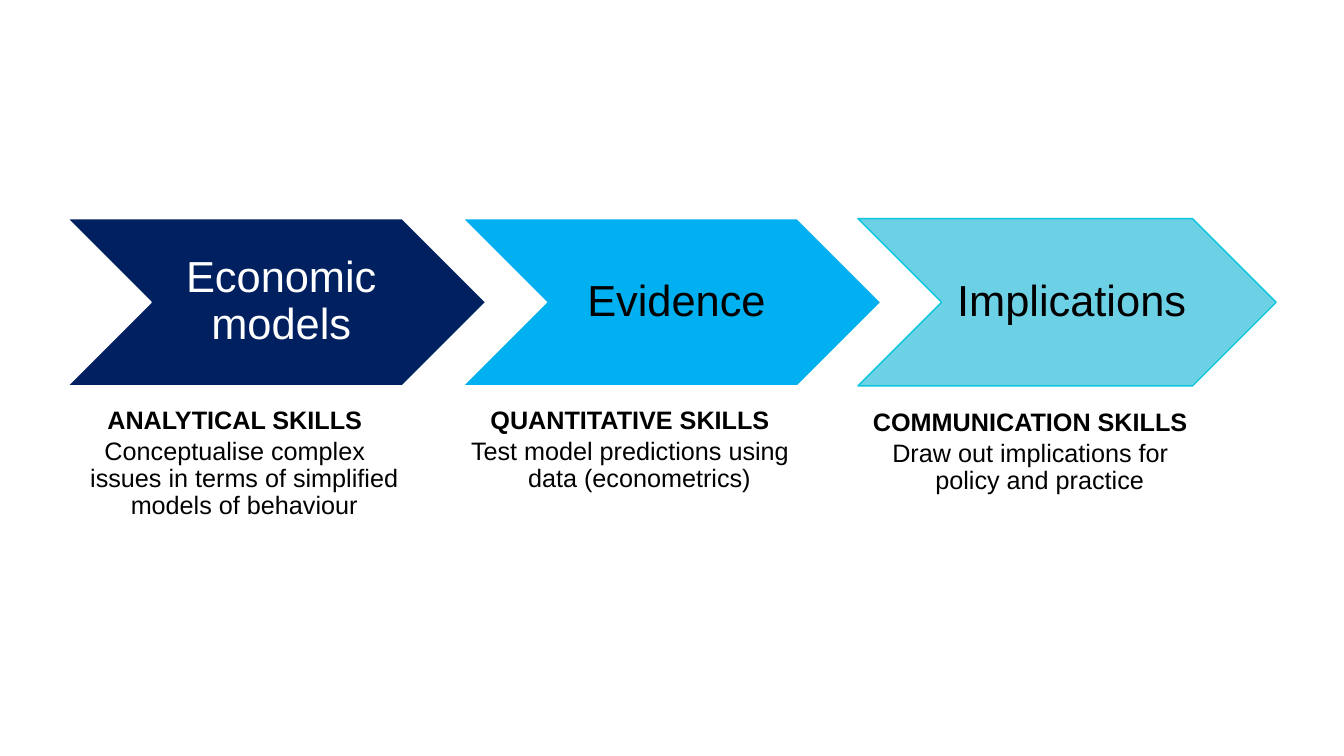
from pptx import Presentation
from pptx.dml.color import RGBColor
from pptx.enum.shapes import MSO_SHAPE
from pptx.enum.text import MSO_ANCHOR, PP_ALIGN
from pptx.util import Pt

CHEVRON = MSO_SHAPE.CHEVRON
MIDDLE, TOP = MSO_ANCHOR.MIDDLE, MSO_ANCHOR.TOP
CENTER = PP_ALIGN.CENTER

COLORS = {"navy": "002060", "blue": "00B0F0", "aqua": "6DD1E5",
          "teal": "0CC6DE", "white": "FFFFFF", "black": "000000"}

# Content: step, fill, line, step text colour, skill, detail, shift of the note
STEPS = [
    ("Economic models", "navy", "white", "white", "ANALYTICAL SKILLS",
     "Conceptualise complex issues in terms of simplified models of behaviour",
     (0, 0)),
    ("Evidence", "blue", "white", "black", "QUANTITATIVE SKILLS",
     "Test model predictions using data (econometrics)", (0, 0)),
    ("Implications", "aqua", "teal", "black", "COMMUNICATION SKILLS",
     "Draw out implications for policy and practice", (3.6, 1.5)),
]

# Layout in points
LEFT, STEP_TOP, PITCH = 48.2, 156.2, 282.3
STEP_W, STEP_H = 298.8, 119.5
NOTE_TOP, NOTE_W, NOTE_H = 290.9, 239, 75.6
HANG = 13.5


def color(name):
    return RGBColor.from_string(COLORS[name])


def set_frame(frame, anchor, insets):
    frame.word_wrap = True
    frame.vertical_anchor = anchor
    (frame.margin_left, frame.margin_top,
     frame.margin_right, frame.margin_bottom) = map(Pt, insets)


def set_para(para, text, size, ink, bold=False, after=0):
    para.text = text
    para.alignment = CENTER
    para.line_spacing = 0.9
    para.space_after = Pt(after)
    font = para.font
    font.name, font.size, font.bold = "Arial", Pt(size), bold
    font.color.rgb = color(ink)


def add_step(slide, x, text, fill, line, ink):
    shape = slide.shapes.add_shape(
        CHEVRON, Pt(x), Pt(STEP_TOP), Pt(STEP_W), Pt(STEP_H))
    shape.shadow.inherit = False
    shape.fill.solid()
    shape.fill.fore_color.rgb = color(fill)
    shape.line.color.rgb = color(line)
    shape.line.width = Pt(1)
    set_frame(shape.text_frame, MIDDLE, (10, 3.5, 3.5, 3.5))
    set_para(shape.text_frame.paragraphs[0], text, 31, ink)


def add_note(slide, x, y, skill, detail):
    frame = slide.shapes.add_textbox(
        Pt(x), Pt(y), Pt(NOTE_W), Pt(NOTE_H)).text_frame
    set_frame(frame, TOP, (0, 0, 0, 0))
    set_para(frame.paragraphs[0], skill, 18, "black", True, 2.8)
    set_para(frame.add_paragraph(), detail, 18, "black", False, 2.8)
    # Hanging indent
    for para in frame.paragraphs:
        props = para._p.get_or_add_pPr()
        props.set("marL", str(Pt(HANG)))
        props.set("indent", str(Pt(-HANG)))


def main():
    deck = Presentation()
    deck.slide_width, deck.slide_height = Pt(960), Pt(540)
    slide = deck.slides.add_slide(deck.slide_layouts[6])

    # Chevrons with a note below each
    for i, (step, fill, line, ink, skill, detail, (dx, dy)) in enumerate(STEPS):
        x = LEFT + i * PITCH
        add_step(slide, x, step, fill, line, ink)
        add_note(slide, x + dx, NOTE_TOP + dy, skill, detail)

    deck.save("out.pptx")


if __name__ == "__main__":
    main()
